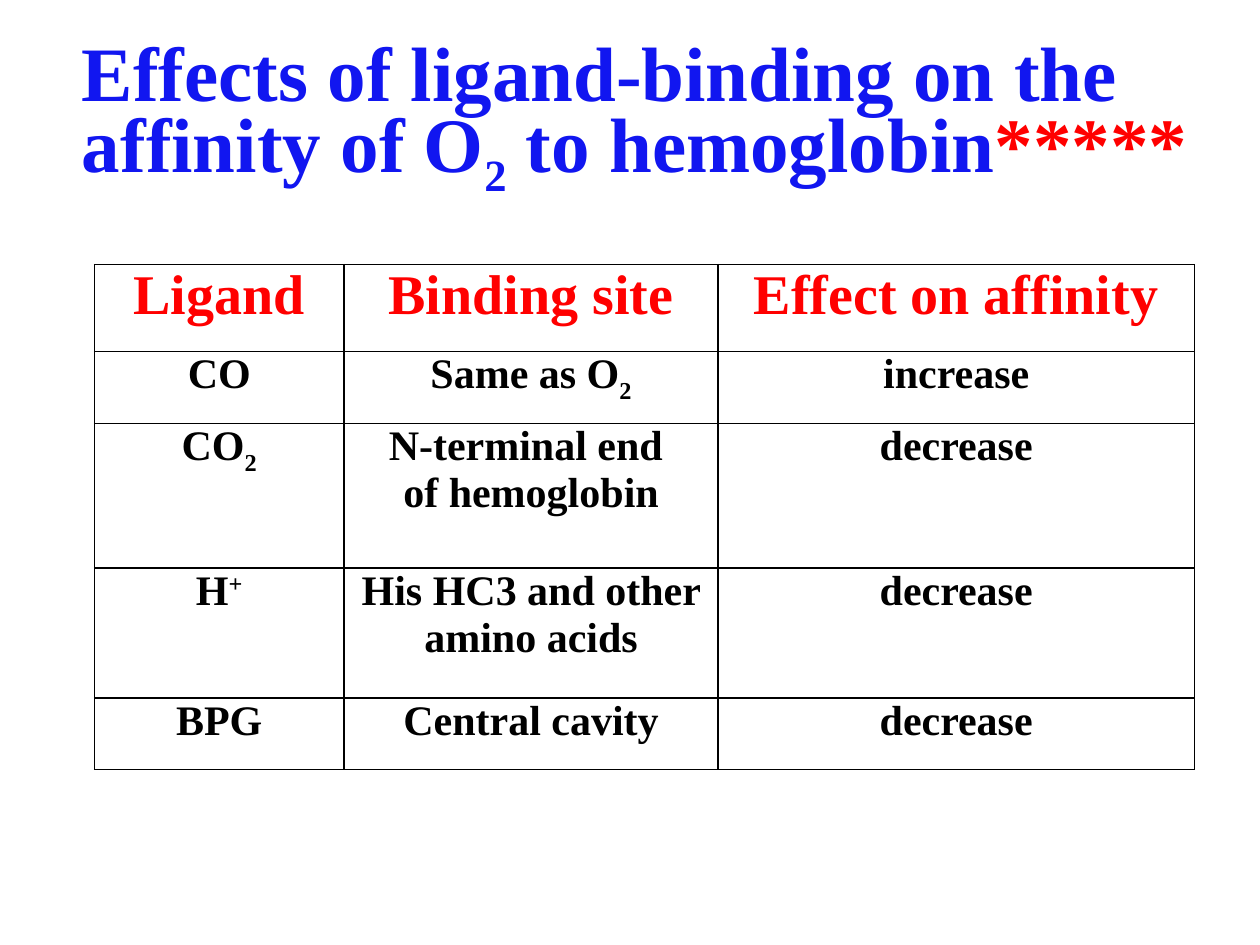
"""Build a slide on how ligands change the oxygen affinity of hemoglobin."""
from dataclasses import dataclass

from lxml.etree import SubElement
from pptx import Presentation
from pptx.dml.color import RGBColor
from pptx.enum.text import PP_ALIGN as Align
from pptx.oxml.ns import qn
from pptx.util import Inches, Pt


@dataclass(frozen=True)
class Theme:
    font: str = "Times New Roman"
    blue: str = "1116F0"
    red: str = "FF0000"
    black: str = "000000"
    title_size: int = 44
    header_size: int = 32
    body_size: int = 24
    subscript: int = -25
    superscript: int = 30


theme = Theme()


def add_run(paragraph, text, size, color, baseline=0):
    run = paragraph.add_run()
    run.text = text
    run.font.name = theme.font
    run.font.size = Pt(size)
    run.font.bold = True
    run.font.color.rgb = RGBColor.from_string(color)
    if baseline:
        run._r.get_or_add_rPr().set("baseline", str(baseline * 1000))


def add_borders(cell):
    properties = cell._tc.get_or_add_tcPr()
    for side in ("lnL", "lnR", "lnT", "lnB"):
        line = SubElement(properties, qn(f"a:{side}"), w=str(Pt(1)))
        fill = SubElement(line, qn("a:solidFill"))
        SubElement(fill, qn("a:srgbClr"), val=theme.black)


presentation = Presentation()
presentation.slide_width = Inches(10)
presentation.slide_height = Inches(7.5)
slide = presentation.slides.add_slide(presentation.slide_layouts[6])

title = slide.shapes.add_textbox(Inches(0.12), Inches(0.21), Inches(9.88), Inches(1.45))
title_frame = title.text_frame
title_frame.word_wrap = True
title_frame.margin_left = Inches(0.53)
title_paragraph = title_frame.paragraphs[0]
title_paragraph.alignment = Align.LEFT
title_paragraph.line_spacing = Pt(48)
for text, color, baseline in (
    ("Effects of ligand-binding on the affinity of O", theme.blue, 0),
    ("2", theme.blue, theme.subscript),
    (" to hemoglobin", theme.blue, 0),
    ("*****", theme.red, 0),
):
    add_run(title_paragraph, text, theme.title_size, color, baseline)

column_widths = (1.98, 2.97, 3.78)
row_heights = (0.69, 0.57, 1.15, 1.03, 0.57)
plain = 0
rows = (
    ([[("Ligand", plain)]], [[("Binding site", plain)]], [[("Effect on affinity", plain)]]),
    ([[("CO", plain)]], [[("Same as O", plain), ("2", theme.subscript)]], [[("increase", plain)]]),
    (
        [[("CO", plain), ("2", theme.subscript)]],
        [[("N-terminal end ", plain)], [("of hemoglobin", plain)]],
        [[("decrease", plain)]],
    ),
    (
        [[("H", plain), ("+", theme.superscript)]],
        [[("His HC3 and other amino acids", plain)]],
        [[("decrease", plain)]],
    ),
    ([[("BPG", plain)]], [[("Central cavity", plain)]], [[("decrease", plain)]]),
)

table = slide.shapes.add_table(
    len(rows), len(column_widths), Inches(0.75), Inches(2.1),
    Inches(sum(column_widths)), Inches(sum(row_heights)),
).table
table.first_row = False
table.horz_banding = False
for column, width in zip(table.columns, column_widths):
    column.width = Inches(width)
for row, height in zip(table.rows, row_heights):
    row.height = Inches(height)

for row_index, row in enumerate(rows):
    is_header = row_index == 0
    size = theme.header_size if is_header else theme.body_size
    color = theme.red if is_header else theme.black
    for column_index, paragraphs in enumerate(row):
        cell = table.cell(row_index, column_index)
        cell.margin_left = cell.margin_right = Inches(0.07)
        cell.margin_top = cell.margin_bottom = 0
        add_borders(cell)
        cell.fill.background()
        for index, parts in enumerate(paragraphs):
            frame = cell.text_frame
            paragraph = frame.add_paragraph() if index else frame.paragraphs[0]
            paragraph.alignment = Align.CENTER
            for text, baseline in parts:
                add_run(paragraph, text, size, color, baseline)

presentation.save("out.pptx")
